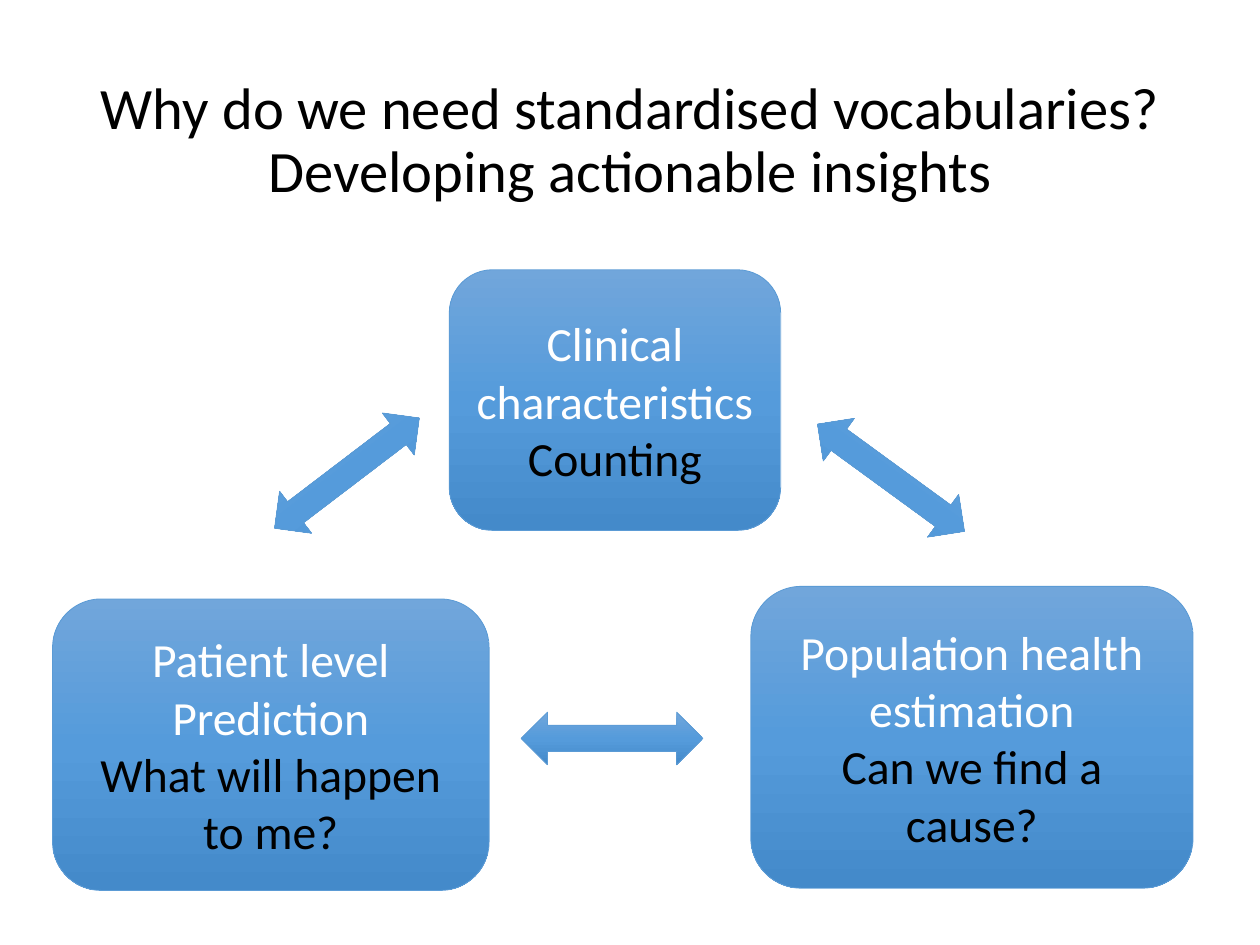
import copy

import pptx
import pptx.dml.color
import pptx.enum.shapes
import pptx.enum.text
import pptx.oxml.ns
import pptx.util

Pt = pptx.util.Pt
SHAPES = pptx.enum.shapes.MSO_SHAPE

# Content: lengths in points, boxes as left, top, width, height
SLIDE_SIZE = (793.7, 595.28)
FONT = "Calibri"
BLACK, WHITE, OUTLINE = "000000", "FFFFFF", "5B9BD5"
GRADIENT = [(0, "71A6DB"), (0.5, "559BDB"), (1, "448ACA")]

TITLE = "Why do we need standardised vocabularies?\vDeveloping actionable insights"
TITLE_BOX = (54.7, 31.7, 684.7, 115.2)

# Each use: box, topic lines, question it answers
USES = [
    ((283, 169.9, 208.8, 164.2), ["Clinical characteristics"], "Counting"),
    ((473, 369.4, 278.6, 190.1), ["Population health estimation"], "Can we find a cause?"),
    ((33.1, 377.3, 275, 183.6), ["Patient level", "Prediction"], "What will happen to me?"),
]

# Each link: left, top, rotation
LINK_SIZE = (114.5, 33.1)
LINKS = [(161.3, 281.5, 322.7), (504, 284.4, 36.1), (328.3, 448.6, 0)]


def rgb(color):
    return pptx.dml.color.RGBColor.from_string(color)


def write(shape, lines, size, spacing=None):
    """Fill a shape with centred lines, given as (text, colour) pairs."""
    frame = shape.text_frame
    frame.word_wrap = True
    frame.vertical_anchor = pptx.enum.text.MSO_ANCHOR.MIDDLE
    for number, (text, color) in enumerate(lines):
        paragraph = frame.add_paragraph() if number else frame.paragraphs[0]
        paragraph.text = text
        paragraph.alignment = pptx.enum.text.PP_ALIGN.CENTER
        paragraph.line_spacing = spacing
        for run in paragraph.runs:
            run.font.name = FONT
            run.font.size = Pt(size)
            run.font.color.rgb = rgb(color)


def add_gradient_shape(slide, preset, box):
    shape = slide.shapes.add_shape(preset, *map(Pt, box))
    shape.shadow.inherit = False
    shape.line.color.rgb = rgb(OUTLINE)
    shape.line.width = Pt(0.5)
    shape.fill.gradient()
    shape.fill.gradient_angle = 270
    # The default gradient has two stops; add the middle one
    first = next(shape.element.iter(pptx.oxml.ns.qn("a:gs")))
    first.addnext(copy.deepcopy(first))
    for stop, (position, color) in zip(shape.fill.gradient_stops, GRADIENT):
        stop.position = position
        stop.color.rgb = rgb(color)
    return shape


def main():
    deck = pptx.Presentation()
    deck.slide_width, deck.slide_height = map(Pt, SLIDE_SIZE)
    slide = deck.slides.add_slide(deck.slide_layouts[6])

    # Title
    title = slide.shapes.add_textbox(*map(Pt, TITLE_BOX))
    write(title, [(TITLE, BLACK)], size=36.9, spacing=0.9)

    # Uses of the vocabularies
    for box, topic, question in USES:
        use = add_gradient_shape(slide, SHAPES.ROUNDED_RECTANGLE, box)
        write(use, [(line, WHITE) for line in topic] + [(question, BLACK)], size=30)

    # Links between the uses
    for left, top, rotation in LINKS:
        link = add_gradient_shape(slide, SHAPES.LEFT_RIGHT_ARROW, (left, top, *LINK_SIZE))
        link.rotation = rotation

    deck.save("out.pptx")


if __name__ == "__main__":
    main()
